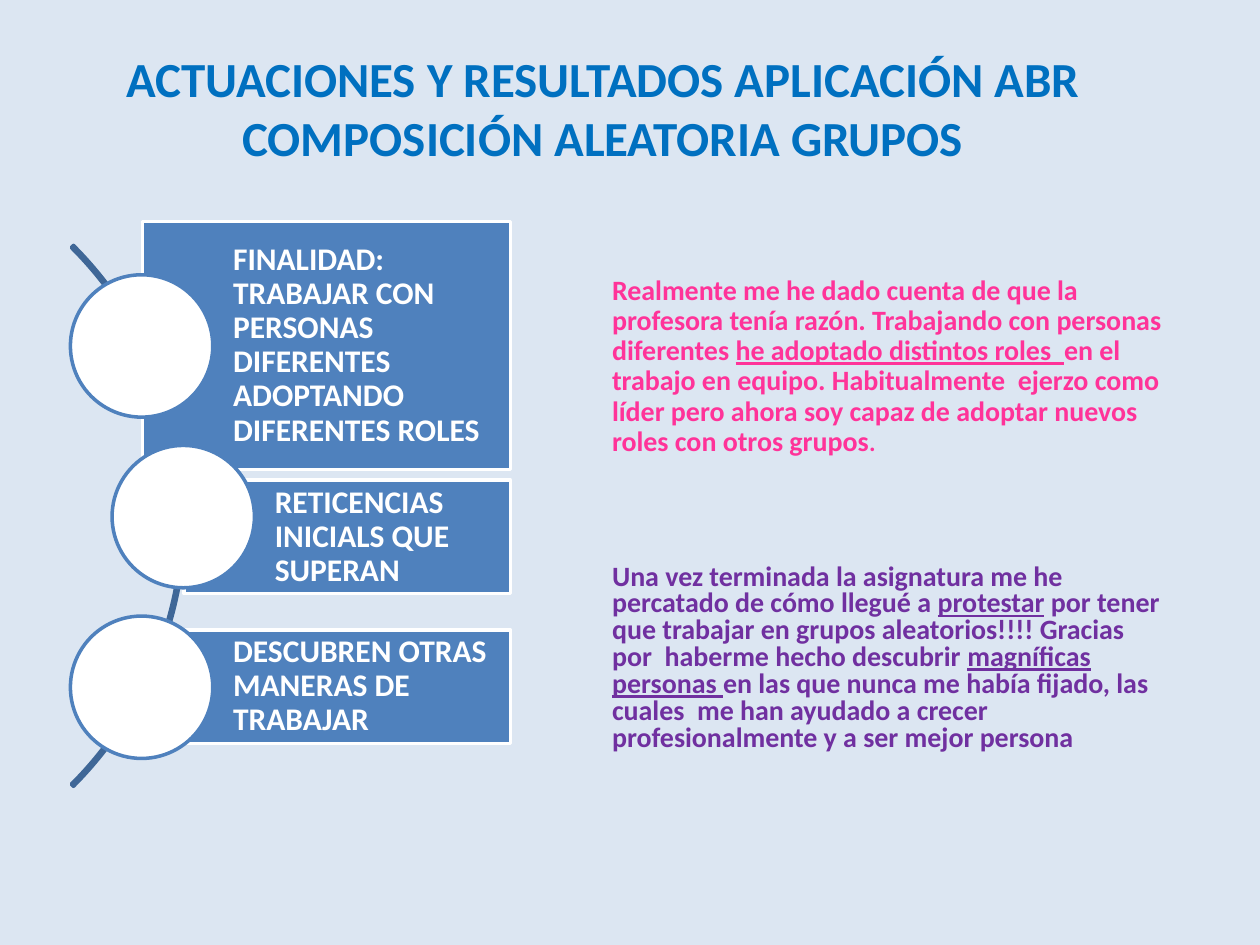
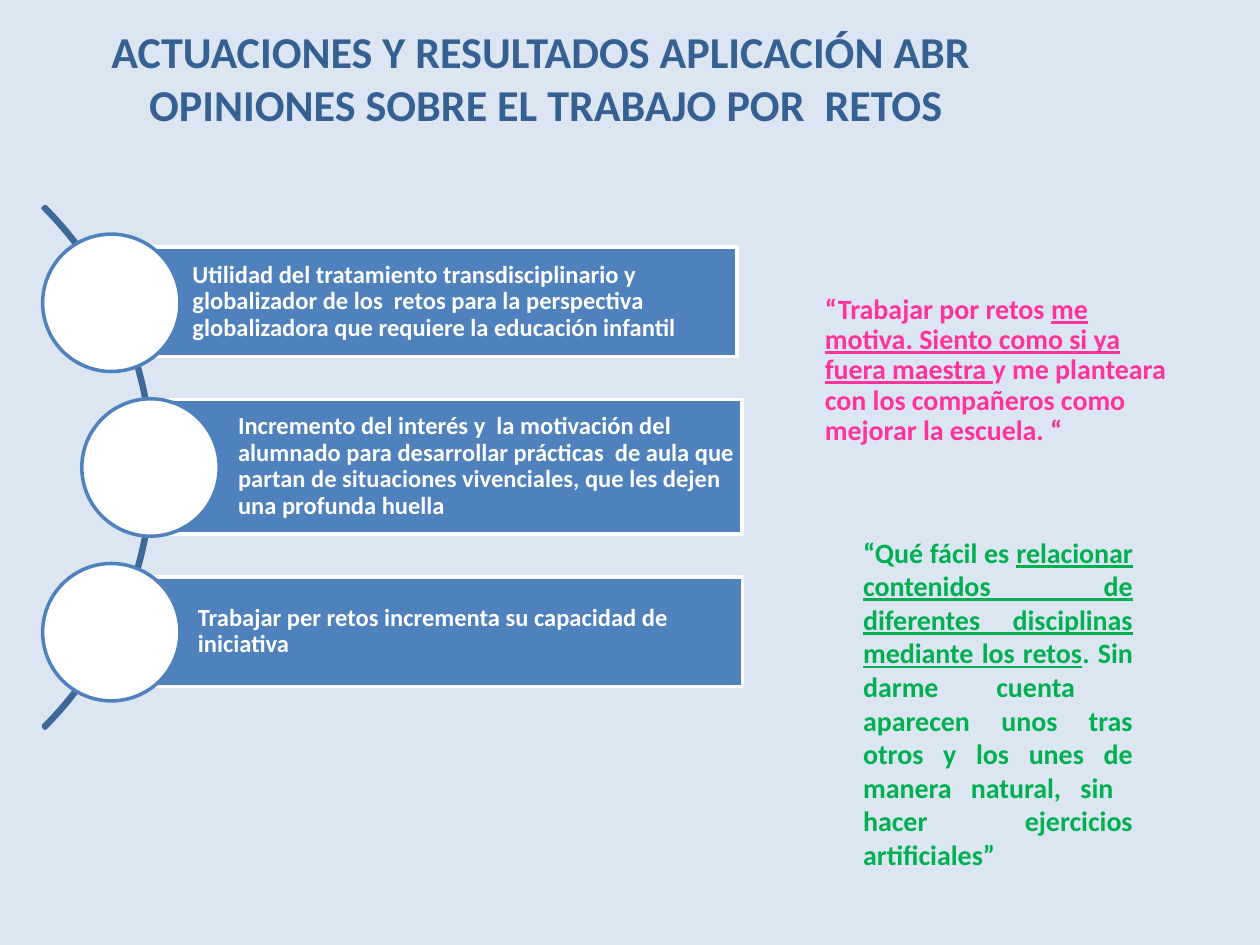
from dataclasses import dataclass
from typing import Any, NamedTuple

from pptx import Presentation
from pptx.dml.color import RGBColor
from pptx.enum.shapes import MSO_SHAPE
from pptx.enum.text import MSO_ANCHOR, PP_ALIGN
from pptx.util import Cm, Pt

BACKGROUND = RGBColor(0xDC, 0xE6, 0xF2)
BRIGHT_BLUE = RGBColor(0x00, 0x70, 0xC0)
DEEP_BLUE = RGBColor(0x37, 0x60, 0x92)
ARC_BLUE = RGBColor(0x3F, 0x67, 0x97)
BAND_BLUE = RGBColor(0x4F, 0x81, 0xBD)
WHITE = RGBColor(0xFF, 0xFF, 0xFF)
PINK = RGBColor(0xFF, 0x33, 0x99)
PURPLE = RGBColor(0x70, 0x30, 0xA0)
GREEN = RGBColor(0x00, 0xB0, 0x50)

RECTANGLE = MSO_SHAPE.RECTANGLE
OVAL = MSO_SHAPE.OVAL
BLOCK_ARC = MSO_SHAPE.BLOCK_ARC
MIDDLE = MSO_ANCHOR.MIDDLE
TOP = MSO_ANCHOR.TOP
LEFT = PP_ALIGN.LEFT
CENTER = PP_ALIGN.CENTER
JUSTIFY = PP_ALIGN.JUSTIFY

FONT_NAME = "Calibri"
LINE_WIDTH = Pt(2)
ARC_ADJUSTMENTS = (189, 27, 0.004)
QUOTE_SIZE = 16


class Box(NamedTuple):
    left: float
    top: float
    width: float
    height: float

    def lengths(self) -> list[Cm]:
        return [Cm(value) for value in self]


class Span(NamedTuple):
    text: str
    underline: bool = False
    size: float | None = None


@dataclass(frozen=True)
class TextStyle:
    size: float
    color: RGBColor
    alignment: Any = LEFT
    anchor: Any = MIDDLE
    line_spacing: float = 1.0
    left_inset: float = 0.25
    inset: float = 0.13


@dataclass(frozen=True)
class TextBlock:
    box: Box
    style: TextStyle
    spans: tuple[Span, ...]


@dataclass(frozen=True)
class Band:
    box: Box
    circle_left: float
    text: str


@dataclass(frozen=True)
class CurvedList:
    arc: Box
    circle_size: float
    circle_top: float
    circle_step: float
    style: TextStyle
    bands: tuple[Band, ...]


@dataclass(frozen=True)
class SlideContent:
    title: TextBlock
    curved_list: CurvedList
    quotes: tuple[TextBlock, ...]


def apply_format(target: Any, values: dict[str, Any]) -> None:
    for name, value in values.items():
        setattr(target, name, value)


def write_text(shape: Any, style: TextStyle, spans: tuple[Span, ...]) -> None:
    apply_format(shape.text_frame, {
        "word_wrap": True,
        "vertical_anchor": style.anchor,
        "margin_left": Cm(style.left_inset),
        "margin_right": Cm(style.inset),
        "margin_top": Cm(style.inset),
        "margin_bottom": Cm(style.inset),
    })
    paragraph = shape.text_frame.paragraphs[0]
    apply_format(paragraph, {
        "alignment": style.alignment,
        "line_spacing": style.line_spacing,
    })
    for span in spans:
        for index, line in enumerate(span.text.split("\n")):
            if index:
                paragraph.add_line_break()
            run = paragraph.add_run()
            run.text = line
            apply_format(run.font, {
                "name": FONT_NAME,
                "size": Pt(span.size or style.size),
                "bold": True,
                "underline": span.underline,
            })
            run.font.color.rgb = style.color


def add_text_block(slide: Any, block: TextBlock) -> None:
    shape = slide.shapes.add_textbox(*block.box.lengths())
    write_text(shape, block.style, block.spans)


def add_outlined_shape(slide: Any, kind: Any, box: Box,
                       fill: RGBColor | None, line: RGBColor) -> Any:
    shape = slide.shapes.add_shape(kind, *box.lengths())
    shape.shadow.inherit = False
    if fill is None:
        shape.fill.background()
    else:
        shape.fill.solid()
        shape.fill.fore_color.rgb = fill
    shape.line.color.rgb = line
    shape.line.width = LINE_WIDTH
    return shape


def add_curved_list(slide: Any, content: CurvedList) -> None:
    arc = add_outlined_shape(slide, BLOCK_ARC, content.arc, None, ARC_BLUE)
    for index, value in enumerate(ARC_ADJUSTMENTS):
        arc.adjustments[index] = value
    for index, band in enumerate(content.bands):
        rectangle = add_outlined_shape(slide, RECTANGLE, band.box, BAND_BLUE, WHITE)
        write_text(rectangle, content.style, (Span(band.text),))
        circle_top = content.circle_top + index * content.circle_step
        circle = Box(band.circle_left, circle_top, content.circle_size, content.circle_size)
        add_outlined_shape(slide, OVAL, circle, WHITE, BAND_BLUE)


def add_content_slide(presentation: Any, content: SlideContent) -> None:
    slide = presentation.slides.add_slide(presentation.slide_layouts[6])
    slide.background.fill.solid()
    slide.background.fill.fore_color.rgb = BACKGROUND
    add_text_block(slide, content.title)
    add_curved_list(slide, content.curved_list)
    for quote in content.quotes:
        add_text_block(slide, quote)


RANDOM_GROUPS = SlideContent(
    title=TextBlock(
        Box(0.94, 0.33, 22.3, 3.68),
        TextStyle(28, BRIGHT_BLUE, CENTER),
        (Span("ACTUACIONES Y RESULTADOS APLICACIÓN ABR COMPOSICIÓN ALEATORIA GRUPOS"),),
    ),
    curved_list=CurvedList(
        arc=Box(-11.68, 2.69, 15.42, 15.42),
        circle_size=2.87,
        circle_top=5.54,
        circle_step=3.44,
        style=TextStyle(18, WHITE, line_spacing=0.9, left_inset=1.83),
        bands=(
            Band(Box(2.87, 4.47, 7.42, 5), 1.42,
                 "FINALIDAD: TRABAJAR CON PERSONAS DIFERENTES ADOPTANDO DIFERENTES ROLES"),
            Band(Box(3.71, 9.68, 6.58, 2.29), 2.26, "RETICENCIAS INICIALS QUE SUPERAN"),
            Band(Box(2.87, 12.7, 7.42, 2.29), 1.42, "DESCUBREN OTRAS MANERAS DE TRABAJAR"),
        ),
    ),
    quotes=(
        TextBlock(
            Box(12.09, 4.98, 11.58, 4.83),
            TextStyle(QUOTE_SIZE, PINK, line_spacing=0.9),
            (
                Span("Realmente me he dado cuenta de que la profesora tenía razón. "
                     "Trabajando con personas diferentes "),
                Span("he adoptado distintos roles  ", True),
                Span("en el trabajo en equipo. Habitualmente  ejerzo como líder pero ahora "
                     "soy capaz de adoptar nuevos roles con otros grupos"),
                Span(".", size=14),
            ),
        ),
        TextBlock(
            Box(12.09, 11.02, 11.58, 4.52),
            TextStyle(QUOTE_SIZE, PURPLE, line_spacing=0.8),
            (
                Span("Una vez terminada la asignatura me he percatado de cómo llegué a "),
                Span("protestar", True),
                Span(" por tener que trabajar en grupos aleatorios!!!! Gracias por  "
                     "haberme hecho descubrir "),
                Span("magníficas personas ", True),
                Span("en las que nunca me había fijado, las cuales  me han ayudado a crecer "
                     "profesionalmente y a ser mejor persona"),
            ),
        ),
    ),
)

CHALLENGE_OPINIONS = SlideContent(
    title=TextBlock(
        Box(0, 0.28, 21.89, 2.57),
        TextStyle(25.2, DEEP_BLUE, CENTER),
        (Span("ACTUACIONES Y RESULTADOS APLICACIÓN ABR \n"
              "OPINIONES SOBRE EL TRABAJO POR  RETOS"),),
    ),
    curved_list=CurvedList(
        arc=Box(-11.79, 1.98, 14.88, 14.88),
        circle_size=2.77,
        circle_top=4.72,
        circle_step=3.32,
        style=TextStyle(14, WHITE, line_spacing=0.9, left_inset=1.75, inset=0.1),
        bands=(
            Band(Box(2.13, 4.98, 12.73, 2.21), 0.86,
                 "Utilidad del tratamiento transdisciplinario y globalizador de los  retos "
                 "para la perspectiva globalizadora que requiere la educación infantil"),
            Band(Box(3.05, 8.05, 11.91, 2.72), 1.65,
                 "Incremento del interés y  la motivación del alumnado para desarrollar "
                 "prácticas  de aula que partan de situaciones vivenciales, que les dejen "
                 "una profunda huella"),
            Band(Box(2.24, 11.63, 12.73, 2.21), 0.86,
                 "Trabajar per retos incrementa su capacidad de iniciativa"),
        ),
    ),
    quotes=(
        TextBlock(
            Box(16.38, 5.38, 7.29, 4.19),
            TextStyle(QUOTE_SIZE, PINK, line_spacing=0.9),
            (
                Span("“Trabajar por retos "),
                Span("me motiva. Siento como si ya fuera maestra ", True),
                Span("y me planteara con los compañeros como mejorar la escuela. “"),
            ),
        ),
        TextBlock(
            Box(16.38, 10.54, 6.71, 7.09),
            TextStyle(QUOTE_SIZE, GREEN, JUSTIFY, TOP, left_inset=1.02, inset=0.25),
            (
                Span("“Qué fácil es "),
                Span("relacionar contenidos de diferentes disciplinas mediante los retos", True),
                Span(". Sin darme cuenta  aparecen unos tras otros y los unes de manera "
                     "natural, sin  hacer ejercicios artificiales” "),
            ),
        ),
    ),
)


def main() -> None:
    presentation = Presentation()
    presentation.slide_width = Cm(25.4)
    presentation.slide_height = Cm(19.05)
    for content in (RANDOM_GROUPS, CHALLENGE_OPINIONS):
        add_content_slide(presentation, content)
    presentation.save("out.pptx")


if __name__ == "__main__":
    main()
